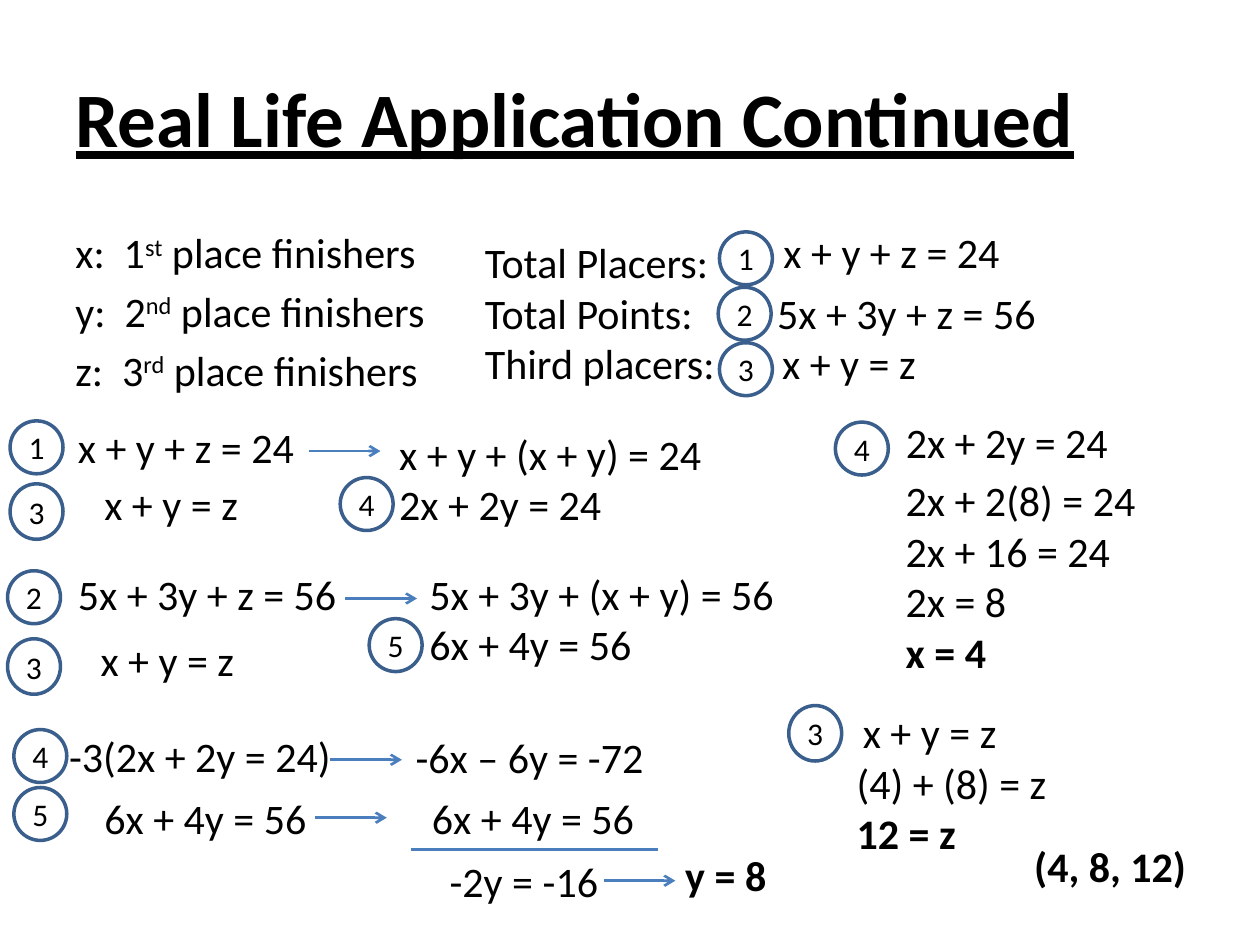
from lxml import etree
from pptx import Presentation
from pptx.dml.color import RGBColor
from pptx.enum.shapes import MSO_CONNECTOR, MSO_SHAPE
from pptx.enum.text import MSO_ANCHOR, PP_ALIGN
from pptx.oxml.ns import qn
from pptx.util import Inches, Pt

ELLIPSE = MSO_SHAPE.OVAL
STRAIGHT = MSO_CONNECTOR.STRAIGHT
MIDDLE = MSO_ANCHOR.MIDDLE
LEFT = PP_ALIGN.LEFT
CENTER = PP_ALIGN.CENTER

FONT = "Calibri"
BLACK = "000000"
RING_BLUE = "3A5F8C"
ARROW_BLUE = "4B7EBC"
RING_SIZE = 0.42
TALL_RING = 0.44
ARROW_LENGTH = 0.57
LINE_HEIGHT = 0.4

SUM = "x + y + z = 24"
POINTS = "5x + 3y + z = 56"
THIRD = "x + y = z"
FOURTH = "2x + 2y = 24"
FIFTH = "6x + 4y = 56"

PLACES = [("x:  1", "st"), ("y:  2", "nd"), ("z:  3", "rd")]

EQUATIONS = [
    (3.75, 1.83, 2.04, ["Total Placers:", "Total Points:", "Third placers:"]),
    (6.12, 1.75, 1.93, [SUM]),
    (6.07, 2.23, 2.27, [POINTS]),
    (6.11, 2.63, 1.27, [THIRD]),
    (0.52, 3.3, 1.93, [SUM]),
    (0.73, 3.75, 1.27, [THIRD]),
    (3.07, 3.35, 2.62, ["x + y + (x + y) = 24", FOURTH]),
    (0.52, 4.46, 2.27, [POINTS]),
    (0.7, 4.99, 1.27, [THIRD]),
    (3.31, 4.46, 2.96, ["5x + 3y + (x + y) = 56", FIFTH]),
    (0.45, 5.75, 2.5, [f"-3({FOURTH})"]),
    (0.73, 6.24, 1.82, [FIFTH]),
    (3.2, 5.76, 2.03, ["-6x – 6y = -72"]),
    (3.33, 6.24, 1.82, [FIFTH]),
    (3.47, 6.74, 1.39, ["-2y = -16"]),
    (7.09, 3.26, 1.82, [FOURTH]),
    (6.75, 5.56, 1.27, [THIRD]),
]

SOLUTIONS = [
    (5.34, 6.69, 0.84, ["y = 8"]),
    (7.09, 3.72, 2.04, ["2x + 2(8) = 24", "2x + 16 = 24", "2x = 8", "x = 4"]),
    (6.7, 5.96, 1.72, ["(4) + (8) = z", "12 = z"]),
    (8.11, 6.62, 1.42, ["(4, 8, 12)"]),
]

RINGS = [
    (1, 5.71, 1.84, RING_SIZE),
    (2, 5.7, 2.28, RING_SIZE),
    (3, 5.71, 2.72, RING_SIZE),
    (1, 0.08, 3.34, RING_SIZE),
    (3, 0.08, 3.84, TALL_RING),
    (4, 2.7, 3.79, RING_SIZE),
    (2, 0.06, 4.53, RING_SIZE),
    (3, 0.06, 5.07, TALL_RING),
    (5, 2.93, 4.91, RING_SIZE),
    (4, 0.11, 5.79, RING_SIZE),
    (5, 0.11, 6.25, RING_SIZE),
    (4, 6.63, 3.35, RING_SIZE),
    (3, 6.26, 5.6, TALL_RING),
]

ARROW_STARTS = [(2.45, 3.58), (2.74, 4.75), (2.62, 6.03), (2.5, 6.49), (4.79, 6.99)]


def color(value):
    return RGBColor.from_string(value)


def style_paragraph(para, size, bold=False):
    para.font.name = FONT
    para.font.size = Pt(size)
    para.font.bold = bold
    para.font.color.rgb = color(BLACK)


def set_title(page, text):
    title = page.shapes.title
    title.left, title.top = Inches(0.5), Inches(0.3)
    title.width, title.height = Inches(9), Inches(1.25)
    title.text_frame.vertical_anchor = MIDDLE
    para = title.text_frame.paragraphs[0]
    para.text = text
    para.alignment = LEFT
    style_paragraph(para, 44, bold=True)
    para.font.underline = True


def add_places(page):
    box = page.shapes.add_textbox(Inches(0.5), Inches(1.75), Inches(3.2), Inches(1.4))
    frame = box.text_frame
    frame.word_wrap = True
    for index, (start, ending) in enumerate(PLACES):
        para = frame.add_paragraph() if index else frame.paragraphs[0]
        style_paragraph(para, 24)
        para.space_before = Pt(4.8)
        para.add_run().text = start
        span = para.add_run()
        span.text = ending
        span.font._element.set("baseline", "30000")
        para.add_run().text = " place finishers"


def add_equations(page, left, top, width, lines, bold_last=False):
    height = LINE_HEIGHT * len(lines) + 0.1
    box = page.shapes.add_textbox(Inches(left), Inches(top), Inches(width), Inches(height))
    frame = box.text_frame
    frame.margin_right = 0
    frame.word_wrap = True
    frame.text = "\n".join(lines)
    for para in frame.paragraphs:
        style_paragraph(para, 24)
    frame.paragraphs[-1].font.bold = bold_last


def add_ring(page, number, left, top, height):
    ring = page.shapes.add_shape(
        ELLIPSE, Inches(left), Inches(top), Inches(RING_SIZE), Inches(height)
    )
    ring.shadow.inherit = False
    ring.fill.background()
    ring.line.color.rgb = color(RING_BLUE)
    ring.line.width = Pt(2)
    frame = ring.text_frame
    frame.margin_left = frame.margin_right = frame.margin_top = frame.margin_bottom = 0
    frame.vertical_anchor = MIDDLE
    frame.word_wrap = False
    para = frame.paragraphs[0]
    para.text = str(number)
    para.alignment = CENTER
    style_paragraph(para, 18)


def add_line(page, left, top, length, arrow=False):
    line = page.shapes.add_connector(
        STRAIGHT, Inches(left), Inches(top), Inches(left + length), Inches(top)
    )
    line.line.color.rgb = color(ARROW_BLUE)
    line.line.width = Pt(1.5)
    properties = line._element.spPr
    if arrow:
        etree.SubElement(properties.find(qn("a:ln")), qn("a:tailEnd"), type="arrow")
    etree.SubElement(properties, qn("a:effectLst"))


def main():
    deck = Presentation()
    deck.slide_width, deck.slide_height = Inches(10), Inches(7.5)
    page = deck.slides.add_slide(deck.slide_layouts[5])
    set_title(page, "Real Life Application Continued")
    add_places(page)
    for equation in EQUATIONS:
        add_equations(page, *equation)
    for solution in SOLUTIONS:
        add_equations(page, *solution, bold_last=True)
    for ring in RINGS:
        add_ring(page, *ring)
    for left, top in ARROW_STARTS:
        add_line(page, left, top, ARROW_LENGTH, arrow=True)
    add_line(page, 3.26, 6.74, 1.96)
    deck.save("out.pptx")


if __name__ == "__main__":
    main()
